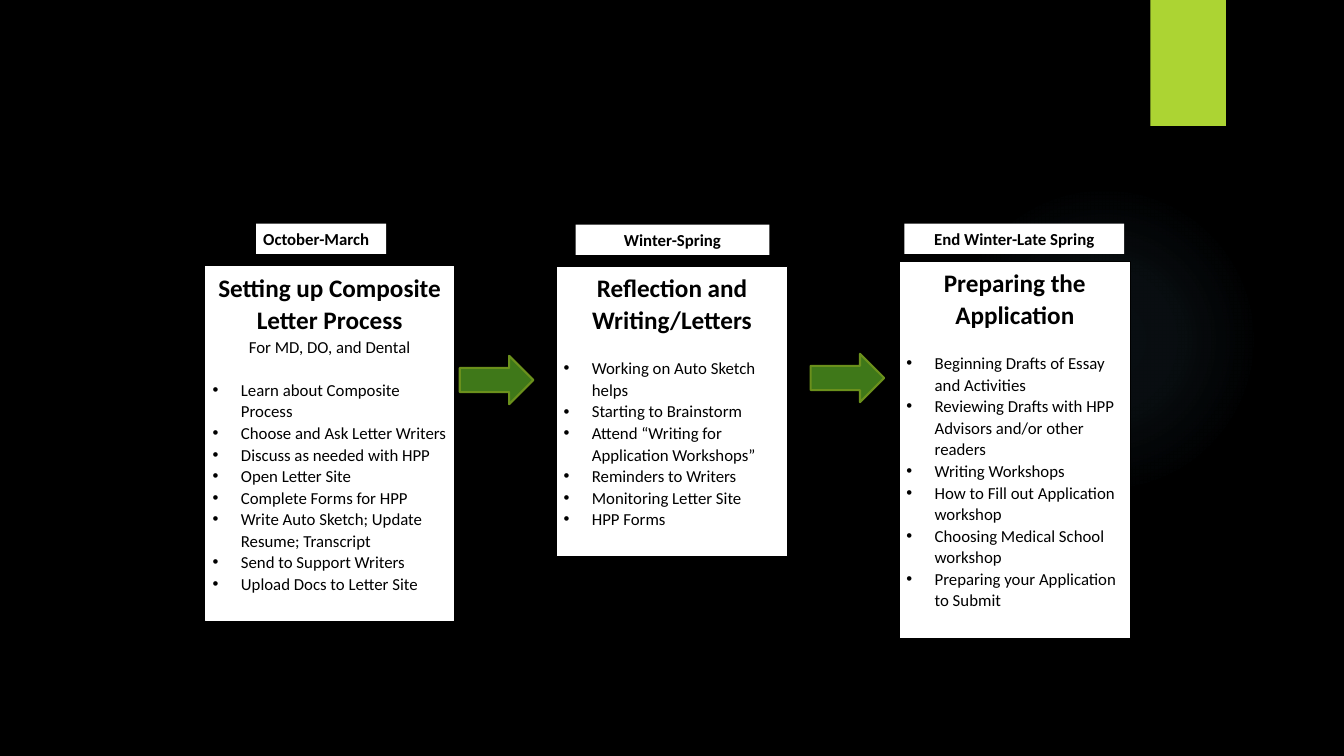
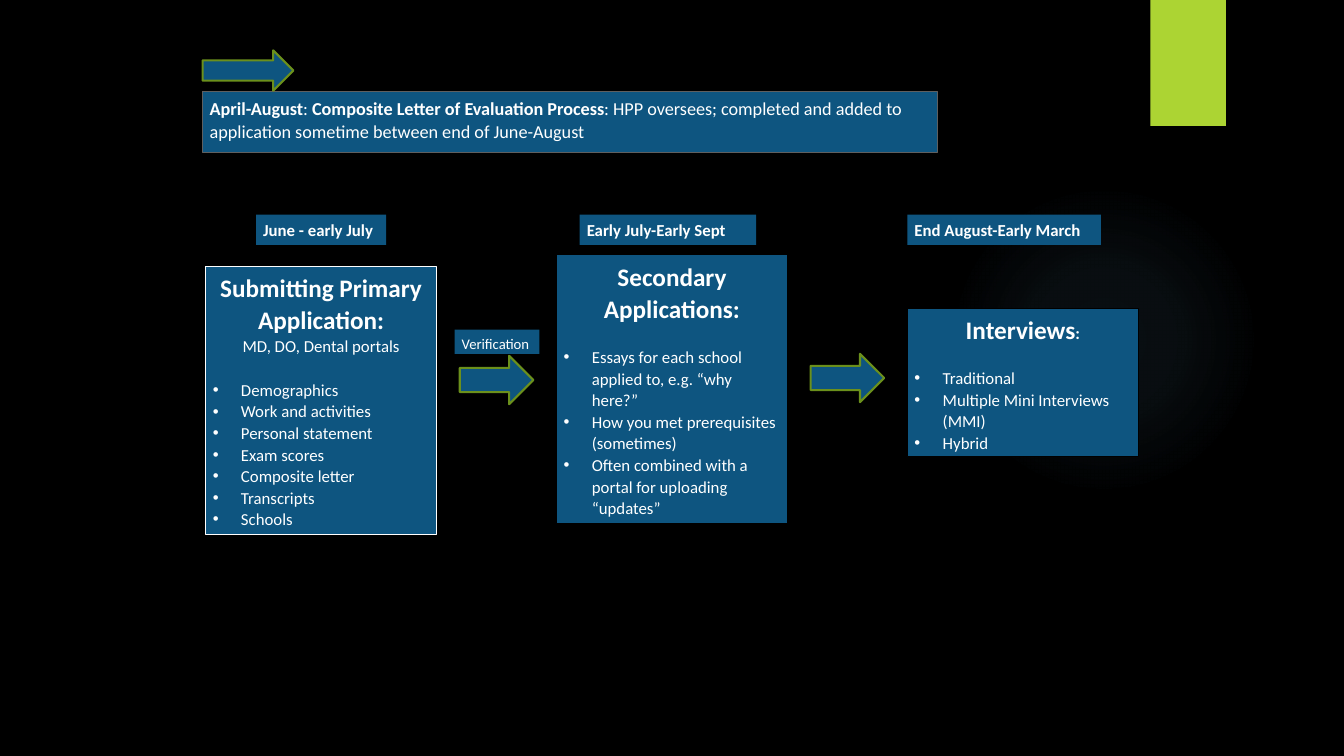
from lxml import etree
from pptx import Presentation
from pptx.dml.color import RGBColor
from pptx.enum.shapes import MSO_SHAPE
from pptx.enum.text import MSO_ANCHOR, PP_ALIGN
from pptx.oxml import parse_xml
from pptx.oxml.ns import nsdecls, qn
from pptx.util import Inches, Pt

BLACK, WHITE = "000000", "FFFFFF"
LIME, GREEN, OLIVE, BLUE, GREY = "ACD433", "3F7819", "6B901C", "0E5580", "5F5F5F"
FONT = "Calibri"
LINE_SPACING = 1.07
BULLET_INDENT = Inches(0.28)
LIST_GAP = Pt(15.6)  # one 12 pt line between heading and list


def add_block(page, kind, place, fill, line=None, line_width=0.75):
    """Add a flat preset shape; place is left, top, width, height in inches."""
    block = page.shapes.add_shape(kind, *[Inches(length) for length in place])
    block.shadow.inherit = False
    block.fill.solid()
    block.fill.fore_color.rgb = RGBColor.from_string(fill)
    if line:
        block.line.color.rgb = RGBColor.from_string(line)
        block.line.width = Pt(line_width)
    else:
        block.line.fill.background()
    return block


def write_text(box, color, lines, bullets=(), align=PP_ALIGN.LEFT):
    """Write lines of (text, size, bold) spans, then a bulleted list."""
    frame = box.text_frame
    frame.word_wrap = True
    frame.vertical_anchor = MSO_ANCHOR.TOP
    frame.margin_left = frame.margin_right = Inches(0.07)
    frame.margin_top = frame.margin_bottom = Inches(0.04)
    paragraphs = lines + [[(bullet, 12, False)] for bullet in bullets]
    for index, spans in enumerate(paragraphs):
        para = frame.add_paragraph() if index else frame.paragraphs[0]
        para.line_spacing = LINE_SPACING
        para.alignment = align
        if index >= len(lines):
            para.alignment = PP_ALIGN.LEFT
            if index == len(lines):
                para.space_before = LIST_GAP
            properties = para._p.get_or_add_pPr()
            properties.set("marL", str(BULLET_INDENT))
            properties.set("indent", str(-BULLET_INDENT))
            etree.SubElement(properties, qn("a:buFont")).set("typeface", "Arial")
            etree.SubElement(properties, qn("a:buChar")).set("char", "•")
        for text, size, bold in spans:
            span = para.add_run()
            span.text = text
            span.font.name = FONT
            span.font.size = Pt(size)
            span.font.bold = bold
            span.font.color.rgb = RGBColor.from_string(color)


# Each page: colours, date labels (place, text, alignment) and
# cards (place, outline, heading lines, bullets)
pages = [
    {
        "fill": WHITE, "ink": BLACK, "arrow": GREEN,
        "labels": [
            ((2.54, 2.22, 1.29, 0.3), "October-March", PP_ALIGN.LEFT),
            ((5.71, 2.23, 1.92, 0.3), "Winter-Spring", PP_ALIGN.CENTER),
            ((8.97, 2.22, 2.18, 0.3), "End Winter-Late Spring", PP_ALIGN.CENTER),
        ],
        "cards": [
            ((2.04, 2.64, 2.46, 3.52), WHITE,
             [[("Setting up Composite Letter Process", 18, True)],
              [("For MD, DO, and Dental", 12, False)]],
             ["Learn about Composite Process",
              "Choose and Ask Letter Writers",
              "Discuss as needed with HPP",
              "Open Letter Site",
              "Complete Forms for HPP",
              "Write Auto Sketch; Update Resume; Transcript",
              "Send to Support Writers",
              "Upload Docs to Letter Site"]),
            ((5.52, 2.64, 2.29, 2.88), BLACK,
             [[("Reflection and Writing/Letters", 18, True)]],
             ["Working on Auto Sketch helps",
              "Starting to Brainstorm",
              "Attend “Writing for Application Workshops”",
              "Reminders to Writers",
              "Monitoring Letter Site",
              "HPP Forms"]),
            ((8.92, 2.59, 2.29, 3.74), BLACK,
             [[("Preparing the Application", 18, True)]],
             ["Beginning Drafts of Essay and Activities",
              "Reviewing Drafts with HPP Advisors and/or other readers",
              "Writing Workshops",
              "How to Fill out Application workshop",
              "Choosing Medical School workshop",
              "Preparing your Application to Submit"]),
        ],
    },
    {
        "fill": BLUE, "ink": WHITE, "arrow": BLUE,
        "labels": [
            ((2.54, 2.13, 1.29, 0.3), "June - early July", PP_ALIGN.LEFT),
            ((5.75, 2.13, 1.75, 0.3), "Early July-Early Sept", PP_ALIGN.LEFT),
            ((9, 2.13, 1.92, 0.3), "End August-Early March", PP_ALIGN.LEFT),
        ],
        "cards": [
            ((2.04, 2.64, 2.29, 2.66), WHITE,
             [[("Submitting Primary Application:", 18, True)],
              [("MD, DO, Dental portals", 12, False)]],
             ["Demographics",
              "Work and activities",
              "Personal statement",
              "Exam scores",
              "Composite letter",
              "Transcripts",
              "Schools"]),
            ((5.52, 2.53, 2.29, 2.66), BLACK,
             [[("Secondary Applications:", 18, True)]],
             ["Essays for each school applied to, e.g. “why here?”",
              "How you met prerequisites (sometimes)",
              "Often combined with a portal for uploading “updates”"]),
            ((9, 3.06, 2.29, 1.47), BLACK,
             [[("Interviews", 18, True), (":", 12, True)]],
             ["Traditional",
              "Multiple Mini Interviews (MMI)",
              "Hybrid"]),
        ],
    },
]

deck = Presentation()
deck.slide_width = Inches(13.33)
deck.slide_height = Inches(7.5)
layout = deck.slide_layouts[6]

# Shared background
background = deck.slide_master.background.fill
background.solid()
background.fore_color.rgb = RGBColor.from_string(BLACK)

for number, content in enumerate(pages):
    page = deck.slides.add_slide(layout)

    # Shared glow and lime tab, built once and moved to the layout
    if number == 0:
        glow = add_block(page, MSO_SHAPE.OVAL, (9.41, 1.83, 3.08, 3.08), BLACK)
        stops = "".join(
            f'<a:gs pos="{position}000"><a:srgbClr val="7AC4F0">'
            f'<a:alpha val="{alpha}000"/></a:srgbClr></a:gs>'
            for position, alpha in [(0, 7), (36, 6), (69, 0), (100, 0)])
        gradient = parse_xml(
            f'<a:gradFill {nsdecls("a")}><a:gsLst>{stops}</a:gsLst>'
            '<a:path path="circle"><a:fillToRect l="50000" t="50000" '
            'r="50000" b="50000"/></a:path></a:gradFill>')
        solid = glow.element.spPr.find(qn("a:solidFill"))
        glow.element.spPr.replace(solid, gradient)
        tab = add_block(page, MSO_SHAPE.RECTANGLE, (11.41, 0, 0.75, 1.25), LIME)
        for decoration in (glow, tab):
            layout.shapes.element.append(decoration.element)

    # Cards
    for place, outline, heading, bullets in content["cards"]:
        card = add_block(page, MSO_SHAPE.RECTANGLE, place, content["fill"], outline)
        write_text(card, content["ink"], heading, bullets, PP_ALIGN.CENTER)

    # Arrows between the cards
    for left, top in [(4.56, 3.53), (8.04, 3.51)]:
        add_block(page, MSO_SHAPE.RIGHT_ARROW, (left, top, 0.73, 0.48),
                  content["arrow"], OLIVE, 1.5)

    # Date labels
    for place, text, align in content["labels"]:
        label = add_block(page, MSO_SHAPE.RECTANGLE, place, content["fill"])
        write_text(label, content["ink"], [[(text, 12, True)]], align=align)

# Verification step and letter banner on the last page
verification = add_block(page, MSO_SHAPE.RECTANGLE, (4.51, 3.27, 0.84, 0.24), BLUE)
write_text(verification, WHITE, [[("Verification", 10.5, False)]])

banner = add_block(page, MSO_SHAPE.RECTANGLE, (2.01, 0.91, 7.29, 0.6), BLUE, GREY)
write_text(banner, WHITE, [[
    ("April-August", 13, True),
    (": ", 13, False),
    ("Composite Letter of Evaluation Process", 13, True),
    (": HPP oversees; completed and added to application sometime "
     "between end of June-August", 13, False),
]])
add_block(page, MSO_SHAPE.RIGHT_ARROW, (2.01, 0.5, 0.9, 0.4), BLUE, OLIVE, 1.5)

deck.save("out.pptx")
